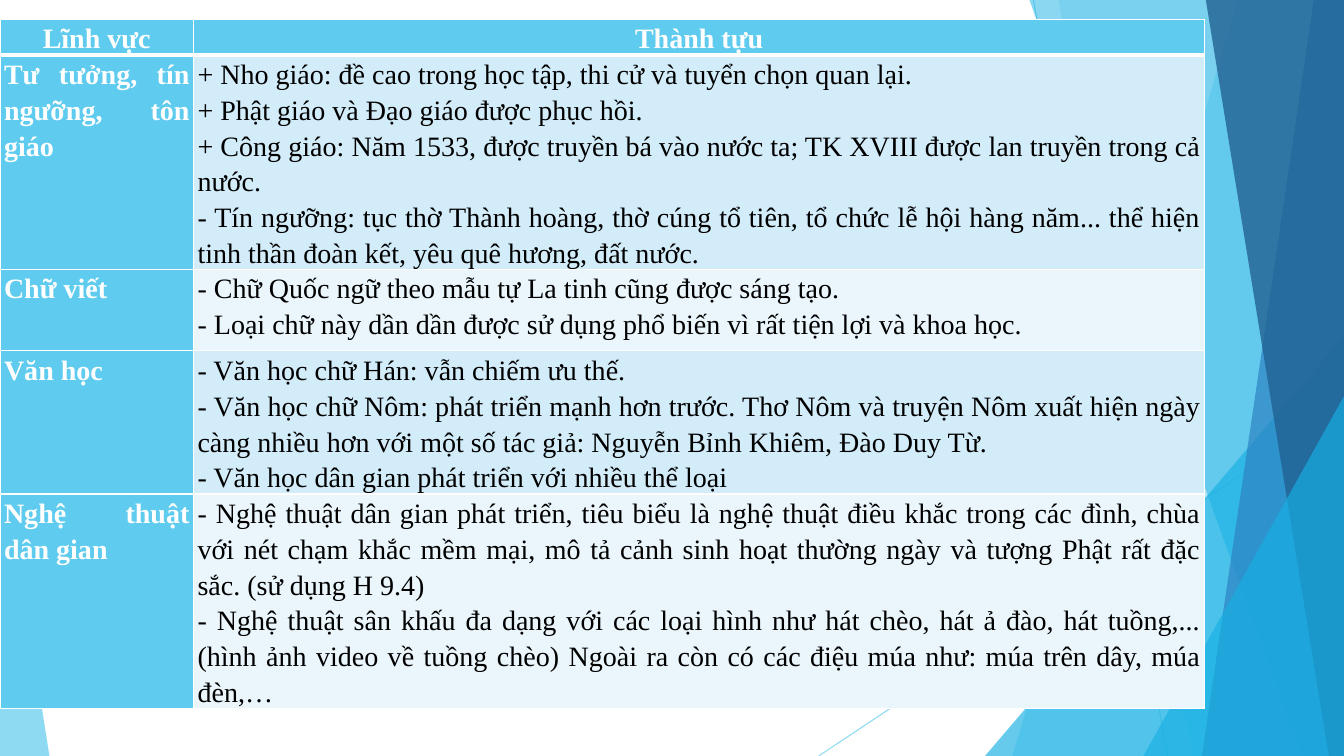
from dataclasses import dataclass

from lxml.etree import SubElement
from pptx import Presentation
from pptx.dml.color import RGBColor as Rgb
from pptx.enum.shapes import MSO_CONNECTOR as Conn, MSO_SHAPE as Shape
from pptx.enum.text import PP_ALIGN as Align
from pptx.oxml import parse_xml
from pptx.oxml.ns import nsdecls, qn
from pptx.util import Inches, Pt


@dataclass(frozen=True)
class Theme:
    sky: str = "5FCBEF"
    cyan: str = "17B0E4"
    blue: str = "2E83C3"
    navy: str = "226292"
    dark: str = "D2ECF9"
    pale: str = "EAF6FC"
    white: str = "FFFFFF"
    black: str = "000000"
    font: str = "Times New Roman"
    size: int = 20
    thin: float = 0.75


THEME = Theme()
WIDE, HIGH = 13.33, 7.5
COLS = (1.92, 10.03)
ROWS = (0.35, 2.12, 0.81, 1.42, 2.12)
HEADS = ("Lĩnh vực", "Thành tựu")
FIELDS = (
    ("Tư tưởng, tín ngưỡng, tôn giáo", (
        "+ Nho giáo: đề cao trong học tập, thi cử và tuyển chọn quan lại.",
        "+ Phật giáo và Đạo giáo được phục hồi.",
        "+ Công giáo: Năm 1533, được truyền bá vào nước ta; TK XVIII được "
        "lan truyền trong cả nước.",
        "- Tín ngưỡng: tục thờ Thành hoàng, thờ cúng tổ tiên, tổ chức lễ hội "
        "hàng năm... thể hiện tinh thần đoàn kết, yêu quê hương, đất nước.")),
    ("Chữ viết", (
        "- Chữ Quốc ngữ theo mẫu tự La tinh cũng được sáng tạo.",
        "- Loại chữ này dần dần được sử dụng phổ biến vì rất tiện lợi và "
        "khoa học.")),
    ("Văn học", (
        "- Văn học chữ Hán: vẫn chiếm ưu thế.",
        "- Văn học chữ Nôm: phát triển mạnh hơn trước. Thơ Nôm và truyện Nôm "
        "xuất hiện ngày càng nhiều hơn với một số tác giả: Nguyễn Bỉnh Khiêm, "
        "Đào Duy Từ.",
        "- Văn học dân gian phát triển với nhiều thể loại")),
    ("Nghệ thuật dân gian", (
        "- Nghệ thuật dân gian phát triển, tiêu biểu là nghệ thuật điều khắc "
        "trong các đình, chùa với nét chạm khắc mềm mại, mô tả cảnh sinh hoạt "
        "thường ngày và tượng Phật rất đặc sắc. (sử dụng H 9.4)",
        "- Nghệ thuật sân khấu đa dạng với các loại hình như hát chèo, hát ả "
        "đào, hát tuồng,... (hình ảnh video về tuồng chèo) Ngoài ra còn có "
        "các điệu múa như: múa trên dây, múa đèn,…")),
)


def fade(fill, alpha):
    tint = fill._xPr.find(qn("a:solidFill"))[0]
    SubElement(tint, qn("a:alpha"), val=str(alpha * 1000))


def paint(shape, color, alpha):
    shape.shadow.inherit = False
    shape.line.fill.background()
    shape.fill.solid()
    shape.fill.fore_color.rgb = Rgb.from_string(color)
    fade(shape.fill, alpha)


def add_ray(slide, start, end):
    ray = slide.shapes.add_connector(
        Conn.STRAIGHT, *(Inches(n) for n in (*start, *end)))
    ray.line.width = Pt(THEME.thin)
    ray.line.color.rgb = Rgb.from_string(THEME.sky)
    fade(ray.line.fill, 70)
    SubElement(ray._element.spPr, qn("a:effectLst"))


def add_band(slide, top, foot, color, alpha):
    pen = slide.shapes.build_freeform(Inches(top), 0)
    pen.add_line_segments(
        [(Inches(x), Inches(y))
         for x, y in ((WIDE, 0), (WIDE, HIGH), (foot, HIGH))])
    paint(pen.convert_to_shape(), color, alpha)


def add_wedge(slide, left, top, width, tip, color, alpha):
    wedge = slide.shapes.add_shape(
        Shape.ISOSCELES_TRIANGLE, Inches(left), Inches(top),
        Inches(width), Inches(HIGH - top))
    wedge.adjustments[0] = tip
    paint(wedge, color, alpha)


def add_edge(cell, side, width):
    return parse_xml(
        f'<a:{side} {nsdecls("a")} w="{Pt(width)}"><a:solidFill>'
        f'<a:srgbClr val="{THEME.white}"/></a:solidFill></a:{side}>')


def fill_cell(cell, lines, fill, align, head=False, foot=1):
    cell.margin_left = cell.margin_right = Inches(0.04)
    cell.margin_top = cell.margin_bottom = 0
    cell.fill.solid()
    cell.fill.fore_color.rgb = Rgb.from_string(fill)
    edges = zip(("lnL", "lnR", "lnT", "lnB"), (1, 1, 1, foot))
    for spot, (side, width) in enumerate(edges):
        cell._tc.tcPr.insert(spot, add_edge(cell, side, width))
    cell.text = "\n".join(lines)
    for para in cell.text_frame.paragraphs:
        para.alignment = align
        para.line_spacing = 1.15
        para.space_after = Pt(10 if head else 0)
        font = para.font
        font.name, font.size, font.bold = THEME.font, Pt(THEME.size), head
        font.color.rgb = Rgb.from_string(THEME.white if head else THEME.black)


def add_grid(slide):
    grid = slide.shapes.add_table(
        len(ROWS), len(COLS), 0, Inches(0.19),
        Inches(sum(COLS)), Inches(sum(ROWS))).table
    for col, width in zip(grid.columns, COLS):
        col.width = Inches(width)
    for row, height in zip(grid.rows, ROWS):
        row.height = Inches(height)
    for col, head in enumerate(HEADS):
        fill_cell(grid.cell(0, col), [head], THEME.sky, Align.CENTER, True, 3)
    for row, (field, lines) in enumerate(FIELDS, 1):
        fill_cell(grid.cell(row, 0), [field], THEME.sky, Align.JUSTIFY, True)
        fill = THEME.dark if row % 2 else THEME.pale
        fill_cell(grid.cell(row, 1), lines, fill, Align.JUSTIFY)


def add_decor(slide):
    add_ray(slide, (10.25, 0), (11.58, HIGH))
    add_ray(slide, (WIDE, 4.03), (8.12, HIGH))
    add_band(slide, 12.28, 10.04, THEME.sky, 36)
    add_band(slide, 10.5, 11.83, THEME.sky, 20)
    add_wedge(slide, 9.77, 3.33, 3.56, 1, THEME.cyan, 66)
    add_band(slide, 10.21, 12.91, THEME.cyan, 50)
    add_band(slide, 13.03, 11.92, THEME.blue, 70)
    add_band(slide, 11.96, 13.18, THEME.navy, 80)
    add_wedge(slide, 11.34, 3.93, 1.99, 1, THEME.cyan, 66)
    add_wedge(slide, 0, 4.39, 0.49, 0, THEME.sky, 70)


def main():
    deck = Presentation()
    deck.slide_width, deck.slide_height = Inches(WIDE), Inches(HIGH)
    slide = deck.slides.add_slide(deck.slide_layouts[6])
    add_decor(slide)
    add_grid(slide)
    deck.save("out.pptx")


if __name__ == "__main__":
    main()
